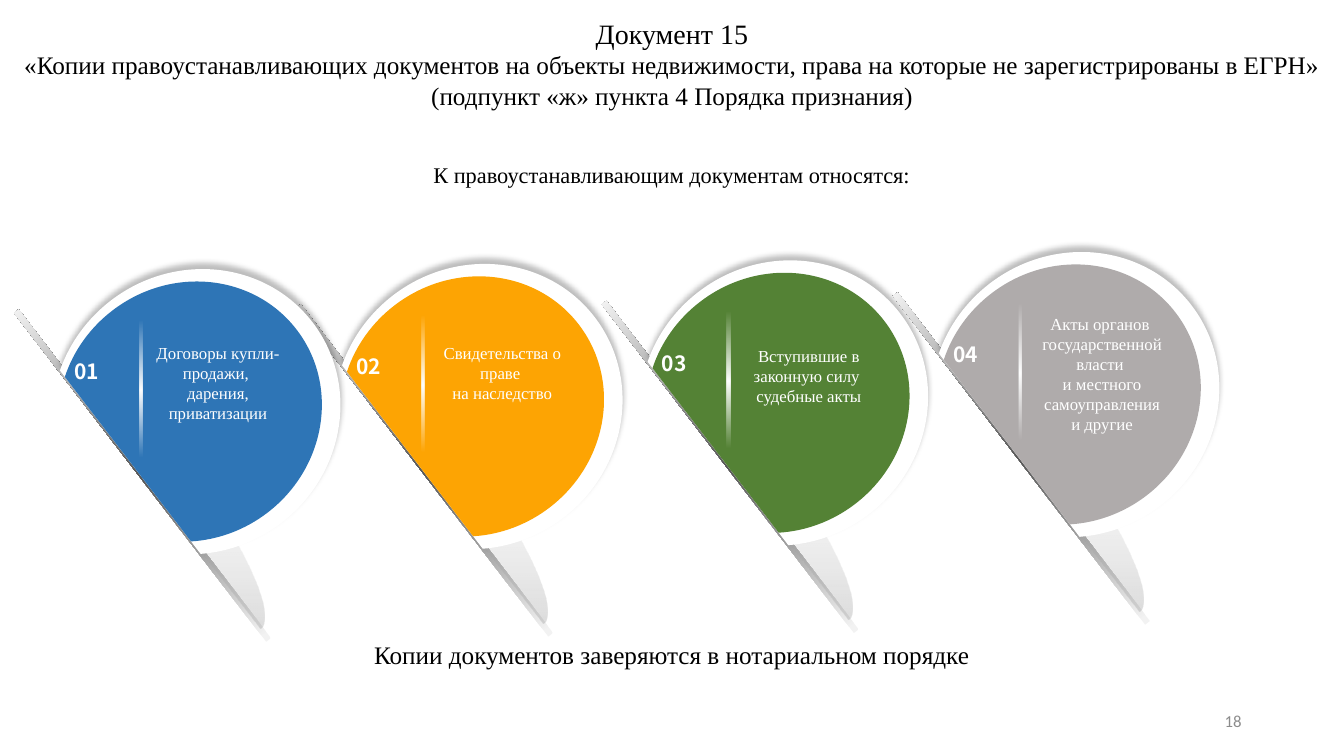
from math import asin, cos, pi, sin, tan

from lxml import etree
from pptx import Presentation
from pptx.dml.color import RGBColor
from pptx.enum.shapes import MSO_SHAPE
from pptx.enum.text import MSO_ANCHOR, MSO_AUTO_SIZE, PP_ALIGN
from pptx.oxml.ns import qn
from pptx.util import Cm, Pt

RECTANGLE = MSO_SHAPE.RECTANGLE
TOP, MIDDLE = MSO_ANCHOR.TOP, MSO_ANCHOR.MIDDLE
LEFT, CENTER, RIGHT = PP_ALIGN.LEFT, PP_ALIGN.CENTER, PP_ALIGN.RIGHT
NO_AUTOFIT = MSO_AUTO_SIZE.NONE

BLACK = RGBColor(0x00, 0x00, 0x00)
WHITE = RGBColor(0xFF, 0xFF, 0xFF)
BLUE = RGBColor(0x2E, 0x75, 0xB6)
ORANGE = RGBColor(0xFD, 0xA4, 0x03)
GREEN = RGBColor(0x54, 0x82, 0x35)
GREY = RGBColor(0xAF, 0xAB, 0xAB)
PAGE_GREY = RGBColor(0x8C, 0x8C, 0x8C)
PALE = RGBColor(0xF2, 0xF2, 0xF2)
MID_GREY = RGBColor(0x80, 0x80, 0x80)
DARK_GREY = RGBColor(0x59, 0x59, 0x59)

SERIF, SANS, NUMBER_FONT = "Times New Roman", "Calibri", "Noto Sans CJK SC"
TILT = 52.5

# Gradient stops: position, colour, opacity (percent)
BAR_STOPS = [(2, PALE, 100), (50, DARK_GREY, 100), (100, PALE, 100)]
FOLD_STOPS = [(26, PALE, 0), (100, MID_GREY, 27)]
DIVIDER_STOPS = [(2, WHITE, 0), (50, WHITE, 100), (100, WHITE, 0)]

# Number, colour, corner of the slanted bar, label box (cm), label lines
FIRST_BADGE = (
    "02", ORANGE, (5.48, 11.69), (10.64, 8.51, 4.04, 2.06),
    ["Свидетельства о праве ", "на наследство"])
OTHER_BADGES = [
    ("03", GREEN, (13.18, 11.6), (18.11, 8.59, 4.55, 2.06),
     ["Вступившие в законную силу ", "судебные акты"]),
    ("01", BLUE, (-1.63, 11.82), (3.68, 8.51, 3.63, 3.23),
     ["Договоры купли-продажи, ", "дарения, приватизации"]),
    ("04", GREY, (20.52, 11.39), (25.5, 7.77, 4.55, 3.81),
     ["Акты органов ", "государственной власти ",
      "и местного самоуправления", "и другие"]),
]


def finish_shape(shape, rotation):
    shape.rotation = rotation
    shape.line.fill.background()
    shape.shadow.inherit = False


def set_solid(shape, color):
    shape.fill.solid()
    shape.fill.fore_color.rgb = color


def set_gradient(shape, stops, angle):
    shape.fill.gradient()
    shape.fill.gradient_angle = angle
    stop_list = shape._element.spPr.find(".//" + qn("a:gsLst"))
    for stop in list(stop_list):
        stop_list.remove(stop)
    for position, color, opacity in stops:
        stop = etree.SubElement(stop_list, qn("a:gs"), pos=str(position * 1000))
        value = etree.SubElement(stop, qn("a:srgbClr"), val=str(color))
        if opacity < 100:
            etree.SubElement(value, qn("a:alpha"), val=str(opacity * 1000))


def add_shadow(shape):
    effects = shape._element.spPr.find(qn("a:effectLst"))
    shadow = etree.SubElement(
        effects, qn("a:outerShdw"), blurRad=str(Pt(4)), dist=str(Pt(4)),
        dir=str(270 * 60000), algn="b", rotWithShape="0")
    color = etree.SubElement(shadow, qn("a:srgbClr"), val=str(BLACK))
    etree.SubElement(color, qn("a:alpha"), val="25000")


def add_strip(shapes, left, top, width, height, rotation, stops):
    strip = shapes.add_shape(RECTANGLE, Cm(left), Cm(top), Cm(width), Cm(height))
    set_gradient(strip, stops, 180)
    finish_shape(strip, rotation)


def add_cut_ellipse(shapes, left, top, radius_x, radius_y, height):
    """Ellipse cut by a level chord at the given height, then tilted."""
    drop = asin((height - radius_y) / radius_y)
    angles = [0, pi / 2, pi]
    if drop > 0:
        angles = [-drop, *angles, pi + drop]

    def place(angle, pull=0):
        return (Cm(radius_x * (1 + cos(angle) - pull * sin(angle))),
                Cm(radius_y * (1 - sin(angle) - pull * cos(angle))))

    anchors = [(Cm(left) + x, Cm(top) + y) for x, y in map(place, angles)]
    builder = shapes.build_freeform(*anchors[0])
    builder.add_line_segments(anchors[1:], close=True)
    shape = builder.convert_to_shape()

    # Bend each straight segment into a curve
    segments = list(shape._element.spPr.iter(qn("a:lnTo")))
    for segment, start, end in zip(segments, angles, angles[1:]):
        pull = 4 / 3 * tan((end - start) / 4)
        curve = etree.Element(qn("a:cubicBezTo"))
        for x, y in (place(start, pull), place(end, -pull), place(end)):
            etree.SubElement(curve, qn("a:pt"), x=str(int(x)), y=str(int(y)))
        segment.getparent().replace(segment, curve)
    finish_shape(shape, TILT)
    return shape


def write_lines(frame, lines, font_name, color, align, anchor=TOP, bold=False):
    """Write (text, size) pairs, one paragraph each."""
    frame.word_wrap = True
    frame.auto_size = NO_AUTOFIT
    frame.vertical_anchor = anchor
    for index, (text, size) in enumerate(lines):
        paragraph = frame.paragraphs[0] if index == 0 else frame.add_paragraph()
        paragraph.alignment = align
        run = paragraph.add_run()
        run.text = text
        run.font.name = font_name
        run.font.size = Pt(size)
        run.font.bold = bold
        run.font.color.rgb = color


def add_text(shapes, box, lines, font_name, color, align=CENTER, **options):
    text_box = shapes.add_textbox(*map(Cm, box))
    write_lines(text_box.text_frame, lines, font_name, color, align, **options)
    return text_box


def add_badge(slide, number, color, corner, label_box, label_lines):
    shapes = slide.shapes.add_group_shape().shapes
    x, y = corner

    # Slanted bar with the folded page behind the disc
    add_strip(shapes, x, y + 0.09, 10.44, 0.15, TILT, BAR_STOPS)
    fold = add_cut_ellipse(shapes, x + 0.72, y - 0.71, 4.9, 1.04, 1.04)
    set_gradient(fold, FOLD_STOPS, 270 + TILT)

    # White rim and coloured disc
    rim = add_cut_ellipse(shapes, x + 3.68, y - 4.83, 3.53, 3.7, 5.79)
    set_solid(rim, WHITE)
    add_shadow(rim)
    disc = add_cut_ellipse(shapes, x + 3.77, y - 4.56, 3.21, 3.39, 5.36)
    set_solid(disc, color)

    # Divider, label and number
    add_strip(shapes, x + 3.43, y - 2.03, 3.5, 0.08, 90, DIVIDER_STOPS)
    add_text(shapes, label_box, [(line, 12) for line in label_lines], SERIF, WHITE)
    add_text(shapes, (x + 3.25, y - 2.9, 1.98, 1.02), [(number, 15)],
             NUMBER_FONT, WHITE, LEFT, bold=True)


def add_title(slide):
    title = slide.shapes.title
    title.left, title.top, title.width, title.height = map(Cm, (0, 0.28, 33.87, 2.64))
    write_lines(title.text_frame, [
        ("Документ 15", 20),
        ("«Копии правоустанавливающих документов на объекты недвижимости, "
         "права на которые не зарегистрированы в ЕГРН»", 18),
        ("(подпункт «ж» пункта 4 Порядка признания)", 18),
    ], SERIF, BLACK, CENTER)


def main():
    presentation = Presentation()
    presentation.slide_width, presentation.slide_height = Cm(33.87), Cm(19.05)
    slide = presentation.slides.add_slide(presentation.slide_layouts[5])
    add_title(slide)
    add_badge(slide, *FIRST_BADGE)

    # Closing and lead-in statements
    add_text(slide.shapes, (4.23, 15.99, 25.4, 1.02),
             [("Копии документов заверяются в нотариальном порядке", 18)],
             SERIF, BLACK)
    lead = add_text(slide.shapes, (4.23, 3.89, 25.4, 0.99),
                    [("К правоустанавливающим документам относятся:", 16)],
                    SERIF, BLACK)
    lead.text_frame.paragraphs[0].line_spacing = 1.07
    lead.text_frame.paragraphs[0].space_after = Pt(6)

    for badge in OTHER_BADGES:
        add_badge(slide, *badge)

    # Page number
    add_text(slide.shapes, (23.92, 17.66, 7.62, 1.01), [("18", 12)],
             SANS, PAGE_GREY, RIGHT, anchor=MIDDLE)
    presentation.save("out.pptx")


if __name__ == "__main__":
    main()
